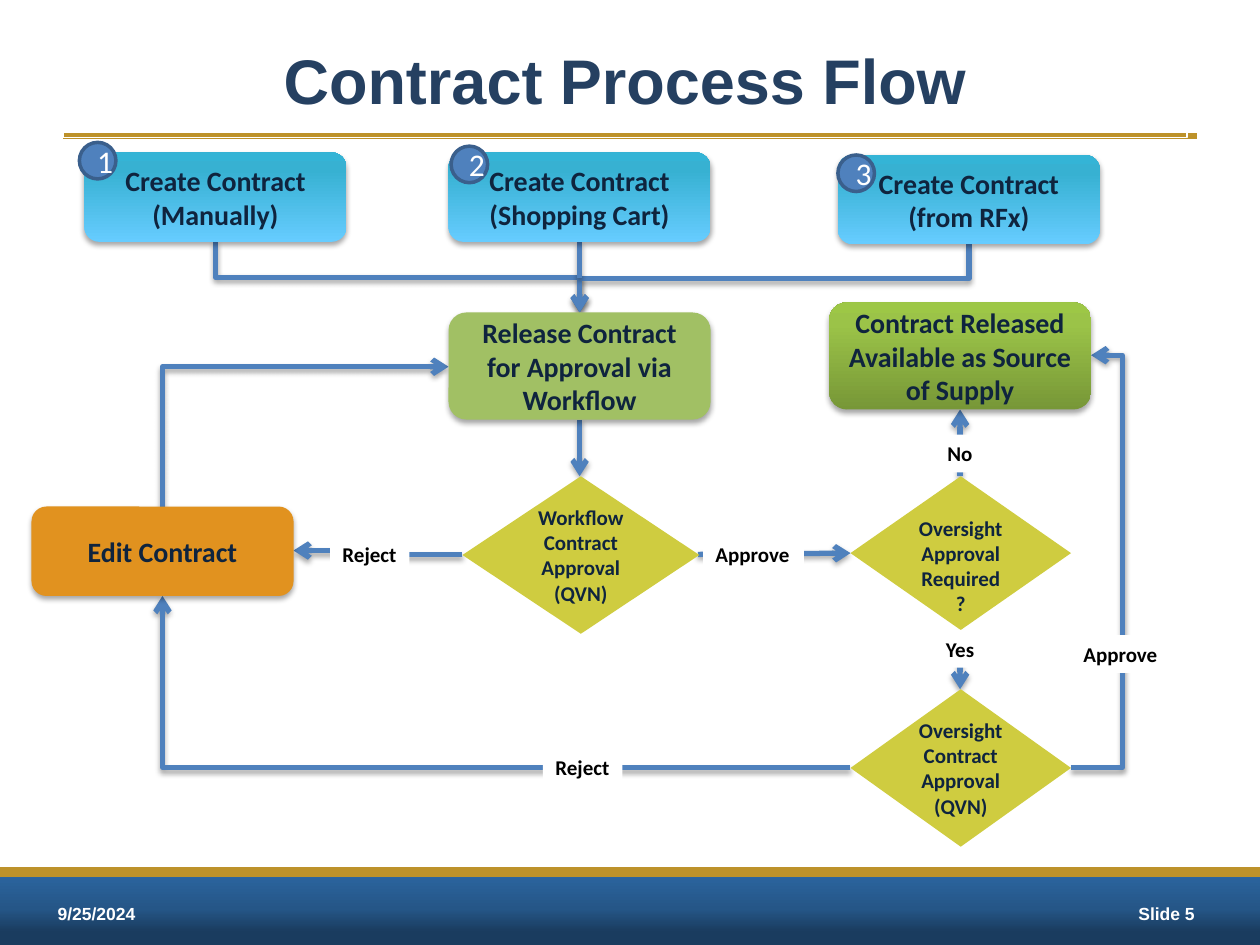
from lxml.etree import SubElement
from pptx import Presentation
from pptx.dml.color import RGBColor
from pptx.enum.shapes import MSO_CONNECTOR, MSO_SHAPE
from pptx.enum.text import MSO_ANCHOR, PP_ALIGN
from pptx.oxml.ns import qn
from pptx.util import Inches, Pt

COLORS = {
    "white": "FFFFFF", "black": "000000", "gold": "BD922A", "title": "254061",
    "ink": "0F243E", "flow": "4F81BD", "badge_edge": "3A5F8C",
    "edit": "E1921F", "release": "A1C064", "decision": "CFCC40",
}
GRADIENTS = {
    "footer": [(18, "1A3C5F"), (50, "255687"), (100, "2B66A1")],
    "released": [(0, "779737"), (80, "9BC348"), (100, "9DC746")],
    "create": [(0, "66CCFF"), (80, "37B1D2"), (100, "34B4D6")],
}


def color(name):
    """Return a named colour."""
    return RGBColor.from_string(COLORS[name])


def add_shadow(effects):
    """Put the soft downward shadow into an effect list."""
    shadow = SubElement(effects, qn("a:outerShdw"), blurRad=str(Pt(3.1)),
                        dist=str(Pt(1.8)), dir="5400000", rotWithShape="0")
    tone = SubElement(shadow, qn("a:srgbClr"), val=COLORS["black"])
    SubElement(tone, qn("a:alpha"), val="35000")


def fill_gradient(shape, stops):
    """Fill a shape with colour stops running from bottom to top."""
    shape.fill.gradient()
    shape.fill.gradient_angle = 90
    stop_list = shape._element.spPr.find(".//" + qn("a:gsLst"))
    for stop in list(stop_list):
        stop_list.remove(stop)
    for position, tone in stops:
        stop = SubElement(stop_list, qn("a:gs"), pos=str(position * 1000))
        SubElement(stop, qn("a:srgbClr"), val=tone)


def write(shape, text, size, ink="ink", font="Calibri", bold=True,
          align=PP_ALIGN.CENTER, wrap=True):
    """Write one paragraph per line of text, centred vertically."""
    frame = shape.text_frame
    frame.word_wrap = wrap
    frame.vertical_anchor = MSO_ANCHOR.MIDDLE
    for index, line in enumerate(text.split("\n")):
        para = frame.add_paragraph() if index else frame.paragraphs[0]
        para.alignment = align
        span = para.add_run()
        span.text = line
        span.font.name = font
        span.font.size = Pt(size)
        span.font.bold = bold
        span.font.color.rgb = color(ink)


def add_box(page, kind, place, fill=None, edge=None, edge_width=0.75, shadow=False):
    """Add a preset shape with a plain, gradient or empty fill."""
    box = page.shapes.add_shape(kind, *map(Inches, place))
    if fill in GRADIENTS:
        fill_gradient(box, GRADIENTS[fill])
    elif fill:
        box.fill.solid()
        box.fill.fore_color.rgb = color(fill)
    else:
        box.fill.background()
    if edge:
        box.line.color.rgb = color(edge)
        box.line.width = Pt(edge_width)
    else:
        box.line.fill.background()
    box.shadow.inherit = False
    if shadow:
        add_shadow(box._element.spPr.find(qn("a:effectLst")))
    return box


def add_step(page, place, fill, text):
    """Add a rounded process step."""
    write(add_box(page, MSO_SHAPE.ROUNDED_RECTANGLE, place, fill, shadow=True), text, 16)


def add_decision(page, place, text):
    """Add a decision diamond."""
    write(add_box(page, MSO_SHAPE.FLOWCHART_DECISION, place, "decision"), text, 12)


def add_label(page, place, text):
    """Add a white label that interrupts a flow line."""
    box = add_box(page, MSO_SHAPE.RECTANGLE, place, "white")
    write(box, text, 12, ink="black", align=PP_ALIGN.LEFT, wrap=False)


def add_footer_text(page, left, text, align):
    """Add a footer text box."""
    box = page.shapes.add_textbox(Inches(left), Inches(7.05), Inches(2), Inches(0.4))
    write(box, text, 10, ink="white", font="Arial", align=align)


def style_line(line, tone, width, arrow=False, shadow=False):
    """Set stroke, arrowhead and shadow of a connector."""
    line.line.color.rgb = color(tone)
    line.line.width = Pt(width)
    if arrow:
        SubElement(line.line._get_or_add_ln(), qn("a:tailEnd"), type="arrow")
    effects = SubElement(line._element.spPr, qn("a:effectLst"))
    if shadow:
        add_shadow(effects)


def add_line(page, start, end, tone="flow", width=3, **style):
    """Add a straight line."""
    line = page.shapes.add_connector(MSO_CONNECTOR.STRAIGHT, *map(Inches, start + end))
    style_line(line, tone, width, **style)


def add_elbow(page, start, end, vertical=False, corners=2, bend=0.5):
    """Add a bent arrow; a vertical start is a turned horizontal one."""
    (x1, y1), (x2, y2) = start, end
    turn = 0
    if vertical:
        across, down = x2 - x1, y2 - y1
        middle_x, middle_y = (x1 + x2) / 2, (y1 + y2) / 2
        turn = 90 if down > 0 else 270
        half_width = abs(down) / 2
        half_height = (-across if down > 0 else across) / 2
        x1, x2 = middle_x - half_width, middle_x + half_width
        y1, y2 = middle_y - half_height, middle_y + half_height
    elbow = page.shapes.add_connector(MSO_CONNECTOR.ELBOW, *map(Inches, (x1, y1, x2, y2)))
    properties = elbow._element.spPr
    if turn:
        properties.find(qn("a:xfrm")).set("rot", str(turn * 60000))
    geometry = properties.find(qn("a:prstGeom"))
    geometry.set("prst", f"bentConnector{corners + 1}")
    if corners == 2:
        guides = geometry.find(qn("a:avLst"))
        SubElement(guides, qn("a:gd"), name="adj1", fmla=f"val {round(bend * 100000)}")
    style_line(elbow, "flow", 3, arrow=True, shadow=True)


def add_frame(page):
    """Add the title, its rule and the footer band."""
    add_line(page, (0.5, 1.08), (9.5, 1.08), "gold")
    add_box(page, MSO_SHAPE.RECTANGLE, (0, 6.92, 10, 0.58), "footer")
    add_footer_text(page, 0.36, "9/25/2024", PP_ALIGN.LEFT)
    add_footer_text(page, 7.58, "Slide 5", PP_ALIGN.RIGHT)
    add_line(page, (0, 6.92), (10, 6.92), "gold", 6)
    title = add_box(page, MSO_SHAPE.RECTANGLE, (0.5, 0.17, 8.92, 0.92), edge="white")
    write(title, "Contract Process Flow", 36, ink="title", font="Arial")


def add_flow_lines(page):
    """Add all arrows between the steps."""
    release_top = (4.6, 2.48)
    add_elbow(page, (1.71, 1.92), release_top, vertical=True)
    add_elbow(page, (7.69, 1.94), release_top, vertical=True)
    add_elbow(page, (8.5, 6.09), (8.66, 2.82), bend=2.55)
    add_elbow(page, (1.29, 4.02), (3.56, 2.91), vertical=True, corners=1)
    add_elbow(page, (6.75, 6.09), (1.29, 4.73), corners=1)
    add_elbow(page, (3.67, 4.4), (2.33, 4.37))
    add_line(page, (4.6, 1.92), (4.6, 2.21), shadow=True)
    for start, end in [((4.6, 3.33), (4.6, 3.78)), ((7.62, 3.78), (7.62, 3.25)),
                       ((7.62, 5), (7.62, 5.47)), ((5.54, 4.4), (6.75, 4.39))]:
        add_line(page, start, end, arrow=True, shadow=True)


def main():
    """Build the slide."""
    deck = Presentation()
    deck.slide_width, deck.slide_height = Inches(10), Inches(7.5)
    page = deck.slides.add_slide(deck.slide_layouts[6])
    add_frame(page)
    add_flow_lines(page)
    add_step(page, (0.25, 4.02, 2.08, 0.71), "edit", "Edit Contract")
    add_step(page, (3.56, 2.48, 2.08, 0.85), "release",
             "Release Contract for Approval via Workflow")
    add_step(page, (6.58, 2.4, 2.08, 0.85), "released",
             "Contract Released Available as Source of Supply")
    add_decision(page, (3.67, 3.78, 1.88, 1.25), "Workflow Contract Approval\n(QVN)")
    add_decision(page, (6.75, 3.78, 1.75, 1.22), " Oversight Approval Required?")
    add_decision(page, (6.75, 5.47, 1.75, 1.25), "Oversight Contract Approval\n(QVN)")
    for text, left, top, width in [
            ("Reject", 2.62, 4.25, 0.63), ("Reject", 4.31, 5.94, 0.63),
            ("Approve", 5.58, 4.25, 0.8), ("Approve", 8.5, 5.04, 0.8),
            ("Yes", 7.41, 5, 0.43), ("No", 7.42, 3.45, 0.4)]:
        add_label(page, (left, top, width, 0.3), text)
    for number, (way, left, top, badge_left, badge_top) in enumerate([
            ("Manually", 0.67, 1.21, 0.63, 1.13),
            ("Shopping Cart", 3.56, 1.21, 3.58, 1.16),
            ("from RFx", 6.65, 1.23, 6.65, 1.23)], start=1):
        add_step(page, (left, top, 2.08, 0.71), "create", f"Create Contract\n({way})")
        badge = add_box(page, MSO_SHAPE.OVAL, (badge_left, badge_top, 0.29, 0.29),
                        "flow", edge="badge_edge", edge_width=2)
        write(badge, str(number), 18, ink="white", bold=False)
    deck.save("out.pptx")


if __name__ == "__main__":
    main()
